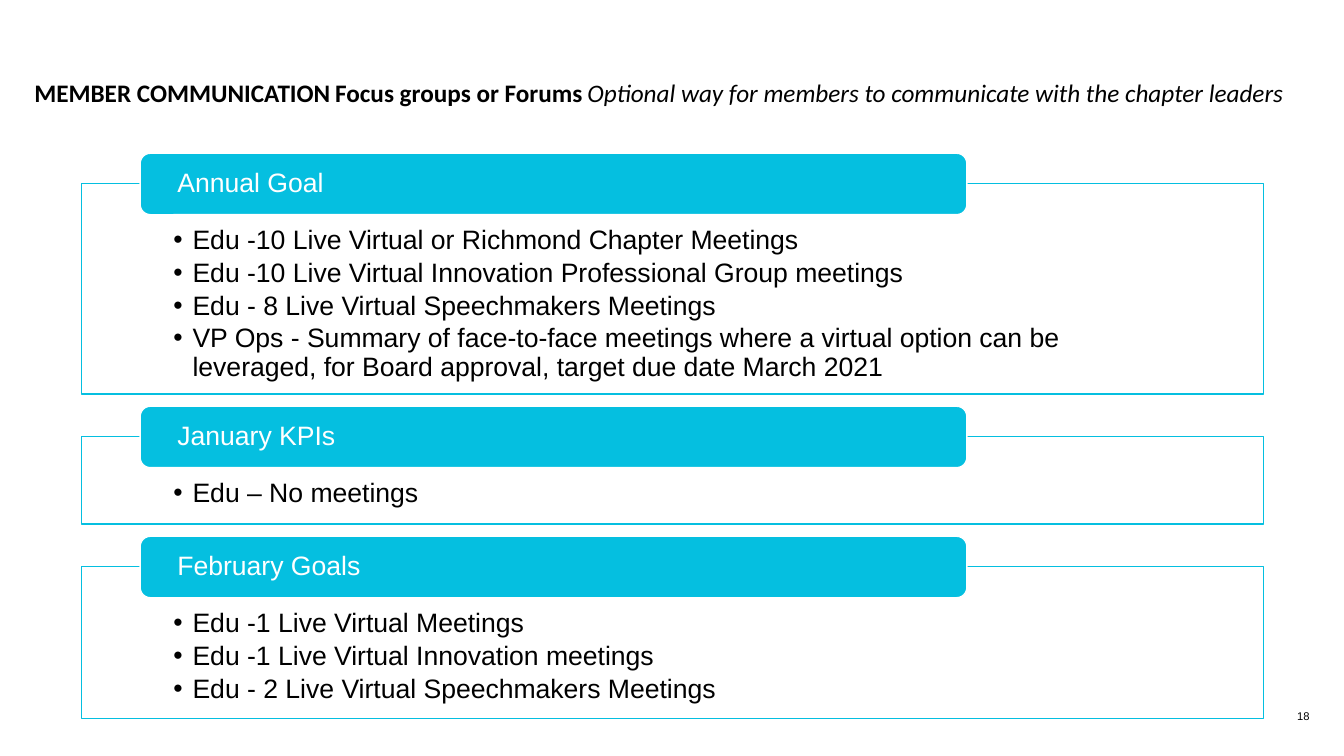
from dataclasses import dataclass

import pptx
import pptx.dml.color
import pptx.enum.shapes
import pptx.enum.text
import pptx.oxml.ns
import pptx.shapes.base
import pptx.slide
import pptx.text.text
import pptx.util
from lxml import etree

Inches = pptx.util.Inches
Pt = pptx.util.Pt
RGBColor = pptx.dml.color.RGBColor
MSO_ANCHOR = pptx.enum.text.MSO_ANCHOR
PP_ALIGN = pptx.enum.text.PP_ALIGN
qn = pptx.oxml.ns.qn

BLACK = RGBColor(0x00, 0x00, 0x00)
WHITE = RGBColor(0xFF, 0xFF, 0xFF)
CYAN = RGBColor(0x05, 0xBF, 0xE0)

FRAME_LEFT, FRAME_WIDTH = 0.81, 11.72
HEADER_LEFT, HEADER_WIDTH, HEADER_HEIGHT = 1.39, 8.2, 0.61
FIRST_TOP = 1.52
FRAME_DROP = 0.3
SECTION_GAP = 0.12


@dataclass
class Section:
    heading: str
    frame_height: float
    items: list[str]


@dataclass
class TitleRun:
    text: str
    size: int = 18
    font: str = "Calibri"
    bold: bool = False
    italic: bool = False


SECTIONS = [
    Section("Annual Goal", 2.09, [
        "Edu -10 Live Virtual or Richmond Chapter Meetings",
        "Edu -10 Live Virtual Innovation Professional Group meetings",
        "Edu - 8 Live Virtual Speechmakers Meetings",
        "VP Ops - Summary of face-to-face meetings where a virtual option can be "
        "leveraged, for Board approval, target due date March 2021",
    ]),
    Section("January KPIs", 0.87, ["Edu – No meetings"]),
    Section("February Goals", 1.51, [
        "Edu -1 Live Virtual Meetings",
        "Edu -1 Live Virtual Innovation meetings",
        "Edu - 2 Live Virtual Speechmakers Meetings",
    ]),
]

SPACE = TitleRun(" ", 12, "Arial")
TITLE = [
    TitleRun("MEMBER COMMUNICATION", bold=True),
    SPACE,
    TitleRun("Focus groups or Forums", bold=True),
    SPACE,
    TitleRun("Optional way for members to communicate with the chapter leaders", italic=True),
]


def place(sp: pptx.shapes.base.BaseShape, left: float, top: float,
          width: float, height: float) -> None:
    sp.left, sp.top = Inches(left), Inches(top)
    sp.width, sp.height = Inches(width), Inches(height)


def format_frame(tf: pptx.text.text.TextFrame, anchor: MSO_ANCHOR,
                 side: float = 0, top: float = 0, bottom: float = 0) -> None:
    tf.word_wrap = True
    tf.auto_size = pptx.enum.text.MSO_AUTO_SIZE.NONE
    tf.vertical_anchor = anchor
    tf.margin_left = tf.margin_right = Inches(side)
    tf.margin_top, tf.margin_bottom = Inches(top), Inches(bottom)


def format_paragraph(p: pptx.text.text._Paragraph, after: float = 0,
                     align: PP_ALIGN = PP_ALIGN.LEFT) -> None:
    p.alignment = align
    p.line_spacing = 0.9
    p.space_before, p.space_after = Pt(0), Pt(after)


def add_run(p: pptx.text.text._Paragraph, text: str, size: float, color: RGBColor,
            font: str = "Arial", bold: bool = False, italic: bool = False) -> None:
    r = p.add_run()
    r.text = text
    r.font.name, r.font.size = font, Pt(size)
    r.font.bold, r.font.italic = bold, italic
    r.font.color.rgb = color


def add_bullet(p: pptx.text.text._Paragraph) -> None:
    pPr = p._p.get_or_add_pPr()
    pPr.set("marL", str(Inches(0.19)))
    pPr.set("indent", str(Inches(-0.19)))
    etree.SubElement(pPr, qn("a:buFont"), typeface="Arial")
    etree.SubElement(pPr, qn("a:buChar"), char="•")


def fill_list(sp: pptx.shapes.base.BaseShape, section: Section, top: float) -> None:
    """Turn a body placeholder into the outlined frame with its bullets."""
    place(sp, FRAME_LEFT, top, FRAME_WIDTH, section.frame_height)
    sp.fill.solid()
    sp.fill.fore_color.rgb = WHITE
    sp.line.color.rgb = CYAN
    sp.line.width = Pt(1)
    tf = sp.text_frame
    format_frame(tf, MSO_ANCHOR.TOP, side=0.91, top=0.43, bottom=0.15)
    for i, item in enumerate(section.items):
        p = tf.add_paragraph() if i else tf.paragraphs[0]
        add_bullet(p)
        format_paragraph(p, after=2.85)
        add_run(p, item, 19, BLACK)


def add_header(s: pptx.slide.Slide, heading: str, top: float) -> None:
    sp = s.shapes.add_shape(
        pptx.enum.shapes.MSO_SHAPE.ROUNDED_RECTANGLE, Inches(HEADER_LEFT), Inches(top),
        Inches(HEADER_WIDTH), Inches(HEADER_HEIGHT))
    sp.shadow.inherit = False
    sp.fill.solid()
    sp.fill.fore_color.rgb = CYAN
    sp.line.color.rgb = WHITE
    sp.line.width = Pt(1)
    format_frame(sp.text_frame, MSO_ANCHOR.MIDDLE, side=0.34)
    p = sp.text_frame.paragraphs[0]
    format_paragraph(p)
    add_run(p, heading, 19, WHITE)


def fill_title(sp: pptx.shapes.base.BaseShape) -> None:
    place(sp, 0.34, 0.36, 12.64, 1.15)
    format_frame(sp.text_frame, MSO_ANCHOR.MIDDLE)
    p = sp.text_frame.paragraphs[0]
    format_paragraph(p)
    for run in TITLE:
        add_run(p, run.text, run.size, BLACK, run.font, run.bold, run.italic)


def add_page_number(s: pptx.slide.Slide, number: str) -> None:
    sp = s.shapes.add_textbox(Inches(12.54), Inches(6.95), Inches(0.45), Inches(0.22))
    format_frame(sp.text_frame, MSO_ANCHOR.BOTTOM)
    p = sp.text_frame.paragraphs[0]
    p.alignment = PP_ALIGN.RIGHT
    add_run(p, number, 8, BLACK)


def main() -> None:
    prs = pptx.Presentation()
    prs.slide_width, prs.slide_height = Inches(13.33), Inches(7.5)
    s = prs.slides.add_slide(prs.slide_layouts.get_by_name("Comparison"))
    fill_title(s.shapes.title)

    bodies = [sp for sp in s.placeholders if sp.placeholder_format.idx > 0]
    top = FIRST_TOP
    for sp, section in zip(bodies, SECTIONS):
        fill_list(sp, section, top + FRAME_DROP)
        add_header(s, section.heading, top)
        top += FRAME_DROP + section.frame_height + SECTION_GAP
    for sp in bodies[len(SECTIONS):]:
        sp.element.getparent().remove(sp.element)

    add_page_number(s, "18")
    prs.save("out.pptx")


if __name__ == "__main__":
    main()
